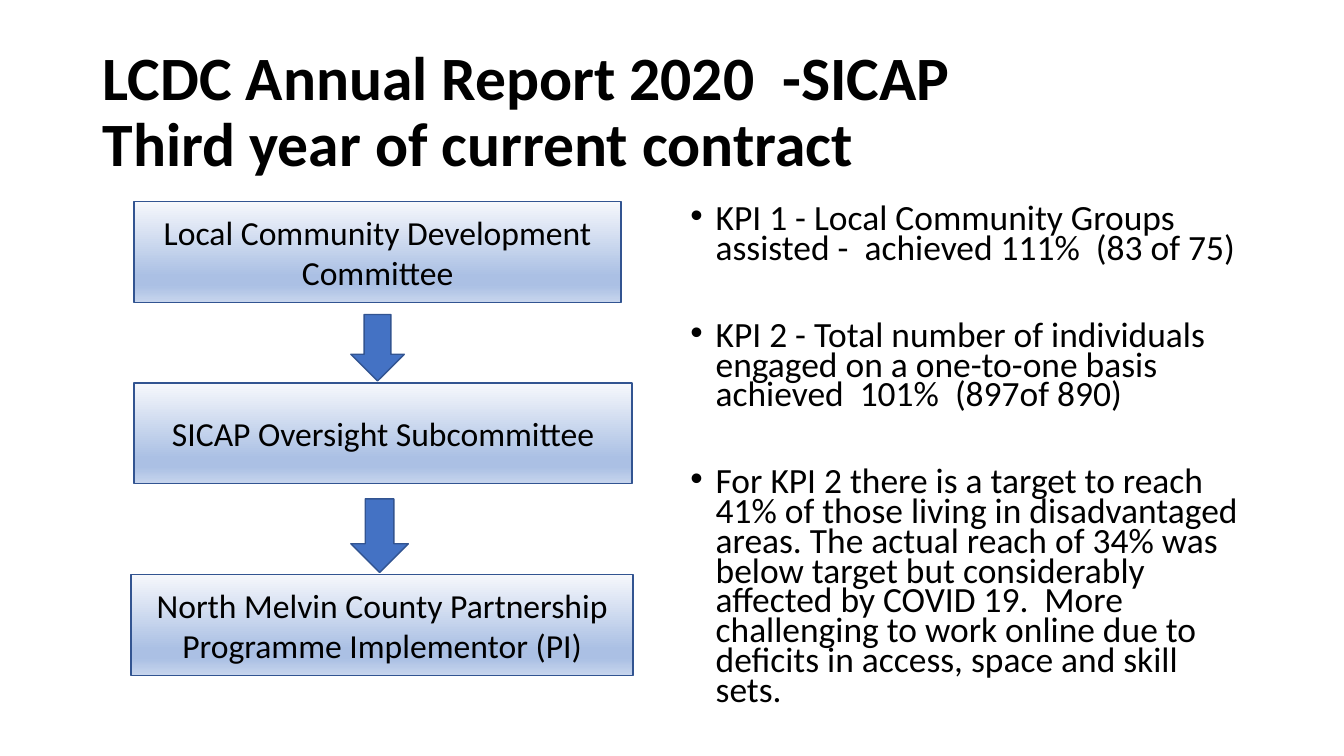
import pptx
import pptx.util
import pptx.dml.color
import pptx.enum.shapes
import pptx.enum.text
import pptx.oxml
import pptx.oxml.ns
import lxml.etree

PX = 9144  # EMU per px, 100 px to the inch
FONT = "Calibri"
COLOURS = {"text": "000000", "arrow": "4472C4", "outline": "325491"}
BOX_GRADIENT = [(0, "F6F8FC"), (74, "ABC0E4"), (83, "ABC0E4"), (100, "C7D5ED")]

# Content
TITLE = "LCDC Annual Report 2020  -SICAP\vThird year of current contract"
BODIES = [  # left, top, width, text
    (133, 200, 483, "Local Community Development Committee"),
    (133, 380, 494, "SICAP Oversight Subcommittee"),
    (130, 570, 498, "North Melvin County Partnership\nProgramme Implementor (PI)"),
]
BODY_HEIGHT = 100
ARROWS = [(348, 312, 53, 66), (348, 495, 57, 73)]
KPIS = [
    "KPI 1 - Local Community Groups assisted -  achieved 111%  (83 of 75)",
    "KPI 2 - Total number of individuals engaged on a one-to-one basis achieved  101%  (897of 890)",
    "For KPI 2 there is a target to reach 41% of those living in disadvantaged areas. "
    "The actual reach of 34% was below target but considerably affected by COVID 19.  "
    "More challenging to work online due to deficits in access, space and skill sets.",
]


# Shared helpers
def emu(*lengths):
    return [pptx.util.Emu(length * PX) for length in lengths]


def rgb(name):
    return pptx.dml.color.RGBColor.from_string(COLOURS[name])


def style_text(frame, size, bold=False, alignment=None, line_spacing=None):
    frame.word_wrap = True
    for paragraph in frame.paragraphs:
        paragraph.alignment = alignment
        paragraph.line_spacing = line_spacing
        for run in paragraph.runs:
            run.font.name = FONT
            run.font.size = pptx.util.Pt(size)
            run.font.bold = bold
            run.font.color.rgb = rgb("text")


def add_outlined(slide, preset, box):
    shape = slide.shapes.add_shape(preset, *emu(*box))
    shape.shadow.inherit = False
    shape.line.color.rgb = rgb("outline")
    shape.line.width = pptx.util.Pt(1)
    return shape


def fill_gradient(shape):
    shape.fill.gradient()
    shape.fill.gradient_angle = 270
    stops = shape._element.spPr.find(".//" + pptx.oxml.ns.qn("a:gsLst"))
    for stop in list(stops):
        stops.remove(stop)
    for position, colour in BOX_GRADIENT:
        stop = lxml.etree.SubElement(stops, pptx.oxml.ns.qn("a:gs"), pos=str(position * 1000))
        lxml.etree.SubElement(stop, pptx.oxml.ns.qn("a:srgbClr"), val=colour)


# Title
def add_title(slide, box):
    frame = slide.shapes.add_textbox(*emu(*box)).text_frame
    frame.text = TITLE
    frame.vertical_anchor = pptx.enum.text.MSO_ANCHOR.MIDDLE
    style_text(frame, 44, bold=True, line_spacing=0.9)


# Governance chain: boxes joined by block arrows
def add_governance_body(slide, box, name):
    body = add_outlined(slide, pptx.enum.shapes.MSO_SHAPE.RECTANGLE, box)
    fill_gradient(body)
    body.text_frame.text = name
    body.text_frame.vertical_anchor = pptx.enum.text.MSO_ANCHOR.MIDDLE
    style_text(body.text_frame, 24, alignment=pptx.enum.text.PP_ALIGN.CENTER)


def add_governance_chain(slide, origin):
    x, y = origin
    for left, top, width, name in BODIES:
        add_governance_body(slide, (x + left, y + top, width, BODY_HEIGHT), name)
    for left, top, width, height in ARROWS:
        arrow = add_outlined(slide, pptx.enum.shapes.MSO_SHAPE.DOWN_ARROW,
                             (x + left, y + top, width, height))
        arrow.fill.solid()
        arrow.fill.fore_color.rgb = rgb("arrow")


# KPI bullets
def add_kpis(slide, box):
    frame = slide.shapes.add_textbox(*emu(*box)).text_frame
    frame.text = "\n".join(KPIS)
    style_text(frame, 25.3, line_spacing=0.7)
    indent = emu(25)[0]
    for index, paragraph in enumerate(frame.paragraphs):
        paragraph.space_before = pptx.util.Pt(41 if index else 10)
        properties = paragraph._p.get_or_add_pPr()
        properties.set("marL", str(indent))
        properties.set("indent", str(-indent))
        lxml.etree.SubElement(properties, pptx.oxml.ns.qn("a:buFont"), typeface="Arial")
        lxml.etree.SubElement(properties, pptx.oxml.ns.qn("a:buChar"), char="•")


def main():
    presentation = pptx.Presentation()
    presentation.slide_width, presentation.slide_height = emu(1333, 750)
    slide = presentation.slides.add_slide(presentation.slide_layouts[6])
    add_title(slide, (92, 40, 1150, 145))
    add_kpis(slide, (675, 200, 567, 550))
    add_governance_chain(slide, (0, 0))
    presentation.save("out.pptx")


if __name__ == "__main__":
    main()
